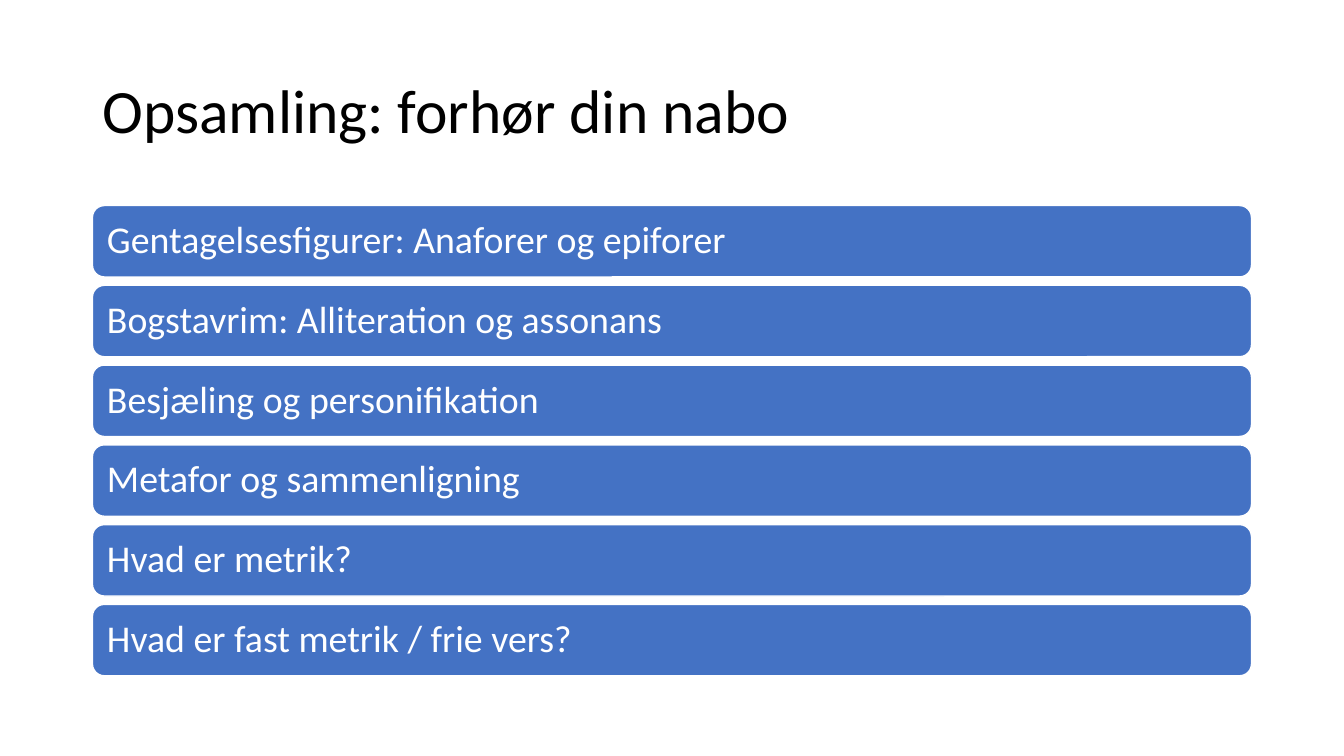
"""Build a recap slide with a title and a stack of question bars."""
from pptx import Presentation
from pptx.dml.color import RGBColor
from pptx.enum.shapes import MSO_SHAPE as Shape
from pptx.enum.text import MSO_ANCHOR as Anchor, PP_ALIGN as Align
from pptx.util import Cm, Pt

TITLE = "Opsamling: forhør din nabo"
TOPICS = [
    "Gentagelsesfigurer: Anaforer og epiforer",
    "Bogstavrim: Alliteration og assonans",
    "Besjæling og personifikation",
    "Metafor og sammenligning",
    "Hvad er metrik?",
    "Hvad er fast metrik / frie vers?",
]
FONT = "Calibri"
BLACK, WHITE, BLUE = "000000", "FFFFFF", "4472C4"
LEFT, WIDTH = 2.33, 29.21
TITLE_TOP, TITLE_HEIGHT = 1.01, 3.68
BAR_TOP, BAR_HEIGHT, BAR_PITCH = 5.18, 1.8, 2.01
BAR_INSET = 0.28


def color(value):
    return RGBColor.from_string(value)


def write(shape, text, size, ink):
    frame = shape.text_frame
    frame.word_wrap = True
    frame.vertical_anchor = Anchor.MIDDLE
    para = frame.paragraphs[0]
    para.alignment = Align.LEFT
    para.line_spacing = 0.9
    span = para.add_run()
    span.text = text
    span.font.name = FONT
    span.font.size = Pt(size)
    span.font.color.rgb = color(ink)


def add_bar(page, index, topic):
    top = BAR_TOP + index * BAR_PITCH
    bar = page.shapes.add_shape(
        Shape.ROUNDED_RECTANGLE, Cm(LEFT), Cm(top), Cm(WIDTH), Cm(BAR_HEIGHT))
    bar.shadow.inherit = False
    bar.fill.solid()
    bar.fill.fore_color.rgb = color(BLUE)
    bar.line.color.rgb = color(WHITE)
    bar.line.width = Pt(1)
    frame = bar.text_frame
    frame.margin_left = frame.margin_right = Cm(BAR_INSET)
    frame.margin_top = frame.margin_bottom = Cm(BAR_INSET)
    write(bar, topic, 27, WHITE)


def main():
    deck = Presentation()
    deck.slide_width, deck.slide_height = Cm(33.87), Cm(19.05)
    page = deck.slides.add_slide(deck.slide_layouts[5])
    title = page.shapes.title
    title.left, title.top = Cm(LEFT), Cm(TITLE_TOP)
    title.width, title.height = Cm(WIDTH), Cm(TITLE_HEIGHT)
    write(title, TITLE, 44, BLACK)
    for index, topic in enumerate(TOPICS):
        add_bar(page, index, topic)
    deck.save("out.pptx")


if __name__ == "__main__":
    main()
